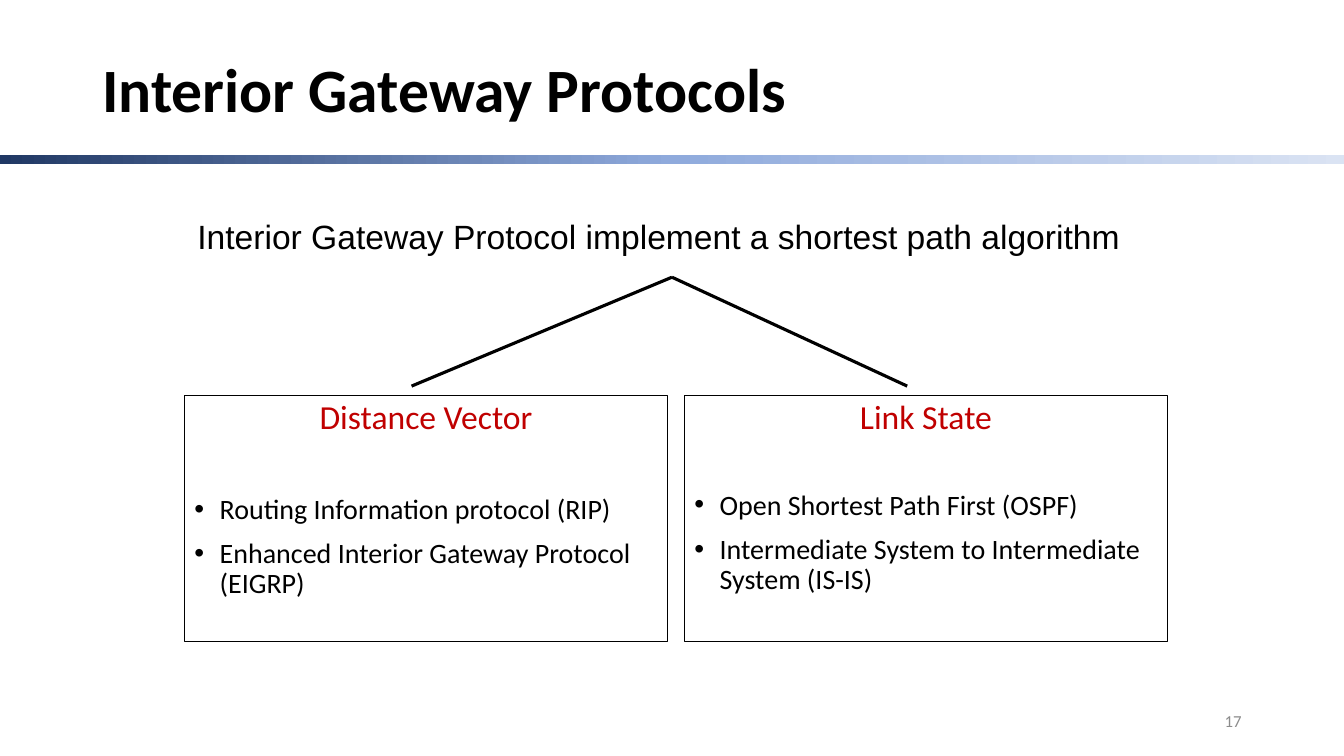
"""Build a slide that sorts interior gateway protocols into two families."""
from copy import deepcopy

from lxml.etree import SubElement
from pptx import Presentation
from pptx.dml.color import RGBColor
from pptx.enum.shapes import MSO_CONNECTOR, MSO_SHAPE
from pptx.enum.text import MSO_ANCHOR as Anchor, PP_ALIGN as Align
from pptx.oxml.ns import qn
from pptx.util import Pt

COLORS = {
    "text": "000000",
    "heading": "C00000",
    "number": "8C8C8C",
    "band_start": "203864",
    "band_middle": "8FAADC",
    "band_end": "DAE3F3",
}
SLIDE_WIDTH, SLIDE_HEIGHT = 960, 540
BOX_TOP, BOX_WIDTH, BOX_HEIGHT = 282.2, 345, 176
BRANCH_APEX = (480, 198)
BRANCH_END_Y = 275.8
FAMILIES = [
    ("Distance Vector", 131.8, 294, 42,
     ["Routing Information protocol (RIP)",
      "Enhanced Interior Gateway Protocol (EIGRP)"]),
    ("Link State", 488.9, 648, 39,
     ["Open Shortest Path First (OSPF)",
      "Intermediate System to Intermediate System (IS-IS)"]),
]


def color(name):
    return RGBColor.from_string(COLORS[name])


def style_paragraph(paragraph, text, size, color_name="text", font="Calibri",
                    bold=False, align=Align.LEFT, before=0, spacing=0.9):
    paragraph.text = text
    paragraph.alignment = align
    paragraph.line_spacing = spacing
    paragraph.space_before = Pt(before)
    paragraph.font.name = font
    paragraph.font.size = Pt(size)
    paragraph.font.bold = bold
    paragraph.font.color.rgb = color(color_name)


def add_bullet(paragraph):
    properties = paragraph._p.get_or_add_pPr()
    properties.set("marL", str(Pt(18)))
    properties.set("indent", str(Pt(-18)))
    SubElement(properties, qn("a:buFont"), typeface="Arial")
    SubElement(properties, qn("a:buChar"), char="•")


def add_label(slide, bounds, text, size, anchor=Anchor.MIDDLE, **style):
    shape = slide.shapes.add_textbox(*map(Pt, bounds))
    frame = shape.text_frame
    frame.word_wrap = True
    frame.vertical_anchor = anchor
    style_paragraph(frame.paragraphs[0], text, size, **style)


def add_band(slide):
    shape = slide.shapes.add_shape(
        MSO_SHAPE.RECTANGLE, 0, Pt(110.7), Pt(SLIDE_WIDTH), Pt(6.8))
    shape.shadow.inherit = False
    shape.line.fill.background()
    shape.fill.gradient()
    shape.fill.gradient_angle = 0
    stop_list = shape._element.spPr.find(".//" + qn("a:gsLst"))
    stop_list.insert(1, deepcopy(stop_list[0]))
    names = ("band_start", "band_middle", "band_end")
    for index, (stop, name) in enumerate(zip(shape.fill.gradient_stops, names)):
        stop.position = index / 2
        stop.color.rgb = color(name)


def add_family_box(slide, heading, left, gap, protocols):
    shape = slide.shapes.add_shape(
        MSO_SHAPE.RECTANGLE, Pt(left), Pt(BOX_TOP), Pt(BOX_WIDTH), Pt(BOX_HEIGHT))
    shape.shadow.inherit = False
    shape.fill.background()
    shape.line.color.rgb = color("text")
    shape.line.width = Pt(0.75)
    frame = shape.text_frame
    frame.word_wrap = True
    frame.vertical_anchor = Anchor.TOP
    style_paragraph(frame.paragraphs[0], heading, 24, "heading", align=Align.CENTER)
    for index, protocol in enumerate(protocols):
        paragraph = frame.add_paragraph()
        style_paragraph(paragraph, protocol, 20, before=10 if index else gap)
        add_bullet(paragraph)


def add_branch(slide, end_x):
    points = (end_x, BRANCH_END_Y, *BRANCH_APEX)
    connector = slide.shapes.add_connector(MSO_CONNECTOR.STRAIGHT, *map(Pt, points))
    connector.line.color.rgb = color("text")
    connector.line.width = Pt(2.25)
    SubElement(connector._element.spPr, qn("a:effectLst"))


def main():
    presentation = Presentation()
    presentation.slide_width = Pt(SLIDE_WIDTH)
    presentation.slide_height = Pt(SLIDE_HEIGHT)
    slide = presentation.slides.add_slide(presentation.slide_layouts[6])

    add_band(slide)
    add_label(slide, (66, 28.8, 828, 75), "Interior Gateway Protocols", 44, bold=True)
    add_label(slide, (133.9, 154.1, 702, 66),
              "Interior Gateway Protocol implement a shortest path algorithm", 24,
              anchor=Anchor.TOP, font="Arial")
    for heading, left, branch_x, gap, protocols in FAMILIES:
        add_family_box(slide, heading, left, gap, protocols)
        add_branch(slide, branch_x)
    add_label(slide, (678, 500.5, 216, 28.8), "17", 12, color_name="number",
              align=Align.RIGHT, spacing=1.0)
    presentation.save("out.pptx")


if __name__ == "__main__":
    main()
